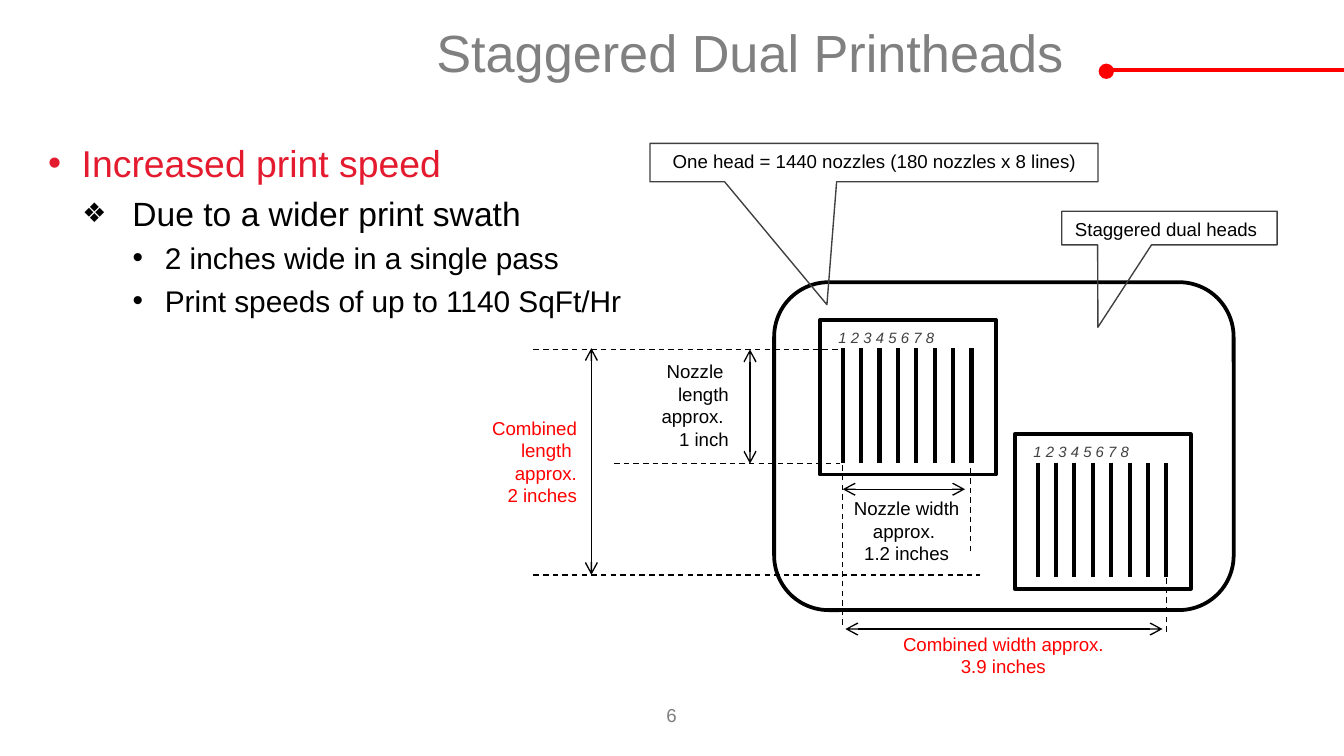
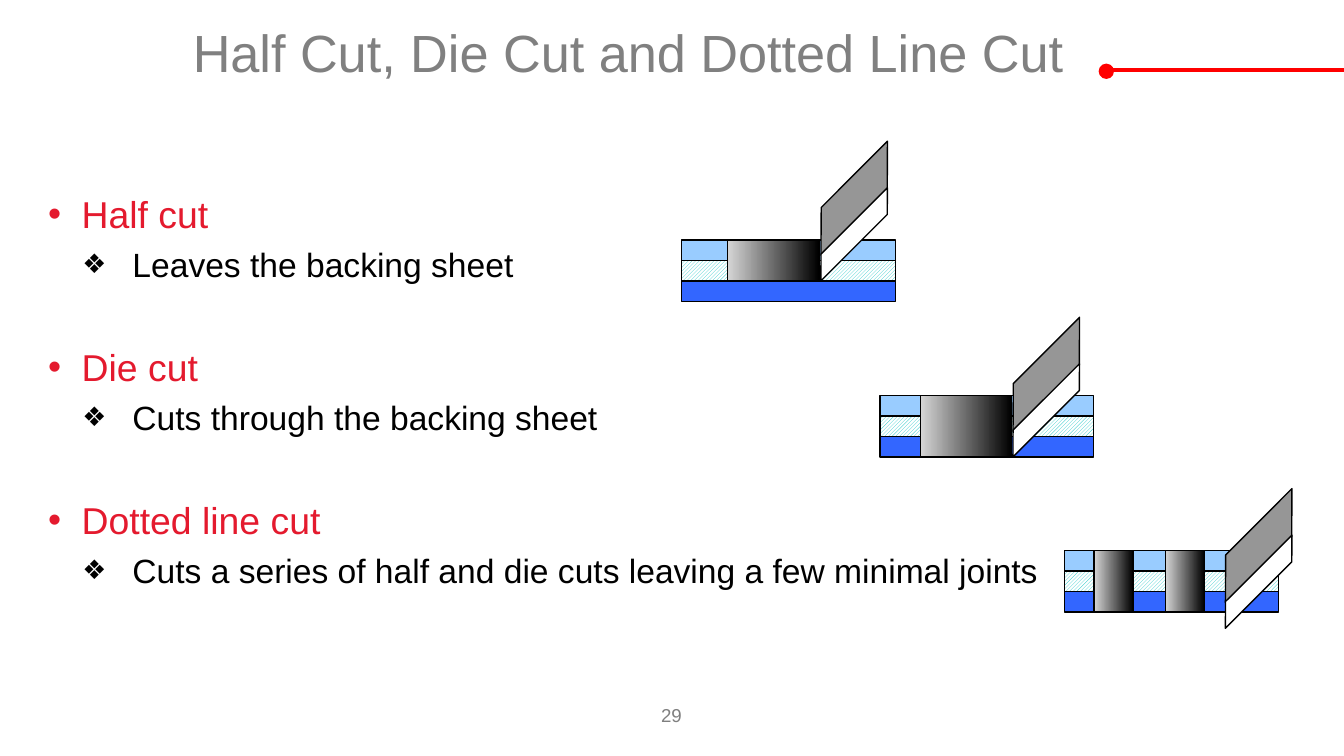
import pptx
import pptx.dml.color
import pptx.enum.dml
import pptx.enum.shapes
import pptx.enum.text
import pptx.oxml.ns
import pptx.util
from lxml import etree

Pt = pptx.util.Pt
RGBColor = pptx.dml.color.RGBColor
SHAPE = pptx.enum.shapes.MSO_SHAPE
ALIGN = pptx.enum.text.PP_ALIGN
ANCHOR = pptx.enum.text.MSO_ANCHOR
qn = pptx.oxml.ns.qn

BLACK = RGBColor(0x00, 0x00, 0x00)
WHITE = RGBColor(0xFF, 0xFF, 0xFF)
RED = RGBColor(0xFF, 0x00, 0x00)
HEADING_RED = RGBColor(0xE4, 0x1A, 0x2E)
TITLE_GRAY = RGBColor(0x80, 0x80, 0x80)
PAGE_GRAY = RGBColor(0x7F, 0x7F, 0x7F)
DARK_GRAY = RGBColor(0x40, 0x40, 0x40)
BLADE_GRAY = RGBColor(0x96, 0x96, 0x96)
CUT_LIGHT = RGBColor(0xD6, 0xD6, 0xD6)
FILM_BLUE = RGBColor(0x99, 0xCC, 0xFF)
GLUE_TEAL = RGBColor(0x33, 0xCC, 0xCC)
BACKING_BLUE = RGBColor(0x33, 0x66, 0xFF)

TITLE_BOX = (18.7, 7.2, 558, 37.4)
PAGE_BOX = (275.8, 373.7, 167.8, 17.3)
BODY_LEFT, BODY_TOP, BODY_WIDTH, BODY_HEIGHT = 18.7, 71.5, 676.8, 284.4
LINE_RATIO = 1.15
SPACE_RATIO = 0.23

# Bullet levels: text indent, hanging indent, bullet, bullet size in percent, text size, colour
LEVELS = [
    (18, 18, "•", 100, 20, HEADING_RED),
    (45.2, 26.8, "❖", 80, 18, BLACK),
    (62.6, 17.3, "•", 100, 16, BLACK),
]


class Deck:
    def __init__(self):
        self.presentation = pptx.Presentation()
        self.presentation.slide_width = Pt(720)
        self.presentation.slide_height = Pt(405)
        self.slide = None

    def start_slide(self, title, page):
        layout = self.presentation.slide_layouts.get_by_name("Title Only")
        self.slide = self.presentation.slides.add_slide(layout)
        heading = self.slide.shapes.title
        heading.left, heading.top, heading.width, heading.height = map(Pt, TITLE_BOX)
        self.fill_frame(heading.text_frame, [title], ALIGN.RIGHT, ANCHOR.BOTTOM,
                        size=Pt(28), color=TITLE_GRAY)
        heading.text_frame.margin_bottom = 0
        self.shape(SHAPE.OVAL, (589.1, 34.6, 7.2, 7.2), RED, RED, 1)
        self.line((593.3, 37.5), (720, 37.5), 2, RED)
        self.text(PAGE_BOX, [page], ALIGN.CENTER, color=PAGE_GRAY)

    def fill_frame(self, frame, lines, align, anchor=ANCHOR.TOP, **font):
        layout = {"word_wrap": True, "vertical_anchor": anchor,
                  "auto_size": pptx.enum.text.MSO_AUTO_SIZE.NONE,
                  "margin_left": Pt(7.2), "margin_right": Pt(7.2),
                  "margin_top": Pt(3.6), "margin_bottom": Pt(3.6)}
        for name, value in layout.items():
            setattr(frame, name, value)
        frame.text = "\n".join(lines)
        for paragraph in frame.paragraphs:
            paragraph.alignment = align
            for run in paragraph.runs:
                self.format_font(run.font, **font)

    @staticmethod
    def format_font(font, color=BLACK, **values):
        for name, value in {"name": "Arial", "size": Pt(10), **values}.items():
            setattr(font, name, value)
        font.color.rgb = color

    def text(self, box, lines, align, **font):
        label = self.slide.shapes.add_textbox(*map(Pt, box))
        self.fill_frame(label.text_frame, lines, align, **font)

    def bullets(self, items, top=BODY_TOP, group_gap=0):
        """Set (level, text) items; group_gap is added above each later heading."""
        box = (BODY_LEFT, top, BODY_WIDTH, BODY_HEIGHT)
        frame = self.slide.shapes.add_textbox(*map(Pt, box)).text_frame
        self.fill_frame(frame, [words for _, words in items], ALIGN.LEFT)
        for index, (paragraph, (level, _)) in enumerate(zip(frame.paragraphs, items)):
            indent, hanging, bullet, percent, size, color = LEVELS[level]
            paragraph.level = level
            properties = paragraph._p.get_or_add_pPr()
            properties.set("marL", str(Pt(indent)))
            properties.set("indent", str(-Pt(hanging)))
            etree.SubElement(properties, qn("a:buSzPct"), val=str(percent * 1000))
            etree.SubElement(properties, qn("a:buFont"), typeface="Arial")
            etree.SubElement(properties, qn("a:buChar"), char=bullet)
            if index:
                gap = group_gap if level == 0 else 0
                paragraph.space_before = Pt(size * SPACE_RATIO + gap)
            for run in paragraph.runs:
                self.format_font(run.font, size=Pt(size), color=color)

    def shape(self, kind, box, fill=None, line=BLACK, width=0.75, adjust=(), rotation=0):
        item = self.slide.shapes.add_shape(kind, *map(Pt, box))
        item.shadow.inherit = False
        item.rotation = rotation
        for index, value in enumerate(adjust):
            item.adjustments[index] = value
        if fill is None:
            item.fill.background()
        else:
            item.fill.solid()
            item.fill.fore_color.rgb = fill
        item.line.color.rgb = line
        item.line.width = Pt(width)
        return item

    def callout(self, box, tip, words, align):
        balloon = self.shape(SHAPE.RECTANGULAR_CALLOUT, box, line=DARK_GRAY, adjust=tip)
        self.fill_frame(balloon.text_frame, [words], align)

    def line(self, start, end, width=0.75, color=BLACK, dashed=False, arrows=False):
        connector = self.slide.shapes.add_connector(
            pptx.enum.shapes.MSO_CONNECTOR.STRAIGHT, *map(Pt, start + end))
        connector.line.color.rgb = color
        connector.line.width = Pt(width)
        if dashed:
            connector.line.dash_style = pptx.enum.dml.MSO_LINE.DASH
        if arrows:
            outline = connector.line._get_or_add_ln()
            for tag in ("a:headEnd", "a:tailEnd"):
                etree.SubElement(outline, qn(tag), type="arrow")
        etree.SubElement(connector._element.spPr, qn("a:effectLst"))

    def printhead(self, left, top):
        self.shape(SHAPE.RECTANGLE, (left, top, 94.3, 82.8), width=2)
        self.text((left + 2.9, top + 1.2, 87, 17.3), ["1 2 3 4 5 6 7 8"],
                  ALIGN.JUSTIFY, size=Pt(8), color=DARK_GRAY, italic=True)
        for nozzle_line in range(8):
            x = left + 12.3 + 9.85 * nozzle_line
            self.line((x, top + 15.3), (x, top + 76.5), 2.25)

    def cut_sample(self, left, top, blade, cuts, cut_layers):
        """Draw three media layers, a blade and the cuts, given as (offset, width)."""
        width, layer = 114.5, 11
        self.shape(SHAPE.RECTANGLE, (left, top, width, layer), FILM_BLUE)
        glue = self.shape(SHAPE.RECTANGLE, (left, top + layer, width, layer))
        glue.fill.patterned()
        glue.fill.pattern = pptx.enum.dml.MSO_PATTERN.DARK_UPWARD_DIAGONAL
        glue.fill.fore_color.rgb = GLUE_TEAL
        glue.fill.back_color.rgb = WHITE
        self.shape(SHAPE.RECTANGLE, (left, top + 2 * layer, width, layer), BACKING_BLUE)

        x, y = blade
        self.shape(SHAPE.PARALLELOGRAM, (x, y, 68.4, 18), BLADE_GRAY,
                   adjust=[1.01], rotation=135)
        self.shape(SHAPE.PARALLELOGRAM, (x + 3.9, y + 23.3, 60.5, 10.1), WHITE,
                   adjust=[1.01], rotation=135)
        for offset, cut_width in cuts:
            cut = self.shape(SHAPE.RECTANGLE,
                             (left + offset, top, cut_width, cut_layers * layer))
            cut.fill.gradient()
            cut.fill.gradient_angle = 0
            for stop, color in zip(cut.fill.gradient_stops, (CUT_LIGHT, BLACK)):
                stop.color.rgb = color


def build_printheads(deck):
    deck.start_slide("Staggered Dual Printheads", "6")
    deck.bullets([
        (0, "Increased print speed"),
        (1, "Due to a wider print swath"),
        (2, "2 inches wide in a single pass"),
        (2, "Print speeds of up to 1140 SqFt/Hr"),
    ])

    deck.shape(SHAPE.ROUNDED_RECTANGLE, (414.7, 151.2, 246.2, 175.7), width=2)
    for left, top in ((439.2, 171.4), (543.6, 232.6)):
        deck.printhead(left, top)

    guides = [
        ((285.8, 187.2), (450, 187.2)),
        ((329, 248.4), (450, 248.4)),
        ((285.8, 308), (524.9, 308)),
        ((451.5, 334.8), (451.5, 249.1)),
        ((519.8, 295.2), (519.8, 249.8)),
        ((625, 338.4), (625, 308.2)),
    ]
    dimensions = [
        ((316.8, 308), (316.8, 186.5)),
        ((401.8, 248.4), (401.8, 187.2)),
        ((451.5, 262.1), (517, 262.1)),
        ((452.9, 337), (622.8, 337)),
    ]
    for start, end in guides:
        deck.line(start, end, dashed=True)
    for start, end in dimensions:
        deck.line(start, end, arrows=True)

    deck.text((472.3, 335.5, 130.3, 31.7), ["Combined width approx. 3.9 inches"],
              ALIGN.CENTER, color=RED)
    deck.text((231.1, 219.6, 85, 55.4), ["Combined length ", "approx.", "2 inches"],
              ALIGN.RIGHT, color=RED)
    deck.text((308.9, 189.4, 88.6, 55.4), ["Nozzle ", "length", "approx. ", "1 inch"],
              ALIGN.RIGHT)
    deck.text((449.3, 262.8, 72.7, 43.9), ["Nozzle width", "approx. ", "1.2 inches"],
              ALIGN.CENTER)
    deck.callout((348.2, 76.8, 240, 20.6), (-0.105, 3.695),
                 "One head = 1440 nozzles (180 nozzles x 8 lines)", ALIGN.CENTER)
    deck.callout((568.8, 113.2, 115.4, 18), (-0.332, 2.951),
                 "Staggered dual heads", ALIGN.LEFT)


def build_cuts(deck):
    deck.start_slide("Half Cut, Die Cut and Dotted Line Cut", "29")
    heading_pitch = 20 * (LINE_RATIO + SPACE_RATIO)
    deck.bullets([
        (0, "Half cut"),
        (1, "Leaves the backing sheet"),
        (0, "Die cut"),
        (1, "Cuts through the backing sheet"),
        (0, "Dotted line cut"),
        (1, "Cuts a series of half and die cuts leaving a few minimal joints"),
    ], BODY_TOP + heading_pitch, heading_pitch)

    deck.cut_sample(365.2, 128.7, (423.4, 97.2), [(24.5, 49)], 2)
    deck.cut_sample(471.4, 211.9, (526.3, 191.5), [(21.6, 49)], 3)
    deck.cut_sample(570.3, 295, (640.1, 283.3), [(15.8, 20.9), (54, 20.9)], 3)


def main():
    deck = Deck()
    build_printheads(deck)
    build_cuts(deck)
    deck.presentation.save("out.pptx")


if __name__ == "__main__":
    main()
